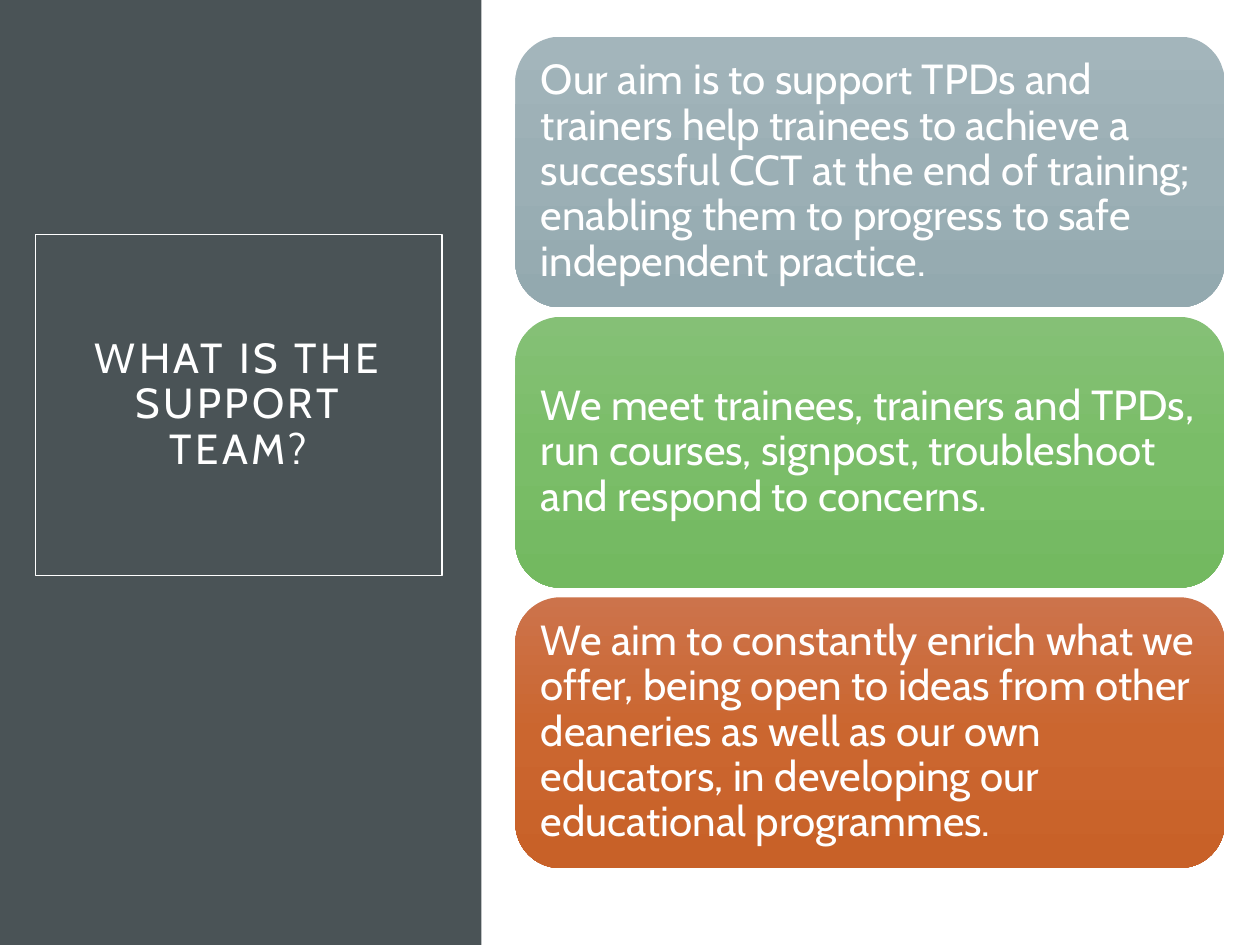
import copy

import pptx
import pptx.dml.color
import pptx.enum.shapes
import pptx.enum.text
import pptx.util
from pptx.util import Inches

SHAPES = pptx.enum.shapes.MSO_SHAPE
ALIGN = pptx.enum.text.PP_ALIGN


def rgb(value):
    return pptx.dml.color.RGBColor.from_string(value)


def write_text(shape, text, inset, align=ALIGN.LEFT, space_after=0, spacing=0):
    """Fill shape with one white paragraph; spacing is between letters, in points."""
    frame = shape.text_frame
    frame.word_wrap = True
    frame.vertical_anchor = pptx.enum.text.MSO_ANCHOR.MIDDLE
    frame.margin_left = frame.margin_right = Inches(inset)
    frame.margin_top = frame.margin_bottom = Inches(inset)
    paragraph = frame.paragraphs[0]
    paragraph.alignment = align
    paragraph.line_spacing = 0.9
    paragraph.space_after = pptx.util.Pt(space_after)
    run = paragraph.add_run()
    run.text = text
    run.font.name = "Cabin"
    run.font.size = pptx.util.Pt(24)
    run.font.color.rgb = rgb("FFFFFF")
    if spacing:
        run.font._element.set("spc", str(spacing * 100))


presentation = pptx.Presentation()
presentation.slide_width = Inches(10)
presentation.slide_height = Inches(7.5)
slide = presentation.slides.add_slide(presentation.slide_layouts[6])

# Title panel
panel = slide.shapes.add_shape(SHAPES.RECTANGLE, 0, 0, Inches(3.82), Inches(7.5))
panel.shadow.inherit = False
panel.fill.solid()
panel.fill.fore_color.rgb = rgb("4A5356")
panel.line.fill.background()

title = slide.shapes.add_shape(
    SHAPES.RECTANGLE, Inches(0.28), Inches(1.86), Inches(3.23), Inches(2.71))
title.shadow.inherit = False
title.fill.background()
title.line.color.rgb = rgb("FFFFFF")
title.line.width = pptx.util.Pt(0.75)
write_text(title, "WHAT IS THE SUPPORT TEAM?", inset=0.2,
           align=ALIGN.CENTER, space_after=6, spacing=2)

# Aims, one gradient card each
aims = [
    ("Our aim is to support TPDs and trainers help trainees to achieve a "
     "successful CCT at the end of training; enabling them to progress to safe "
     "independent practice.", ["A3B5BB", "9BAFB5", "93A9AF"]),
    ("We meet trainees, trainers and TPDs, run courses, signpost, troubleshoot "
     "and respond to concerns.", ["85C076", "7ABD68", "73B960"]),
    ("We aim to constantly enrich what we offer, being open to ideas from other "
     "deaneries as well as our own educators, in developing our educational "
     "programmes.", ["CC734B", "CB662F", "C86128"]),
]
CARD_LEFT, CARD_TOP, CARD_WIDTH, CARD_HEIGHT = 4.09, 0.29, 5.63, 2.15
CARD_PITCH = 2.225
TEXT_INDENT = 0.105  # keeps the text clear of the rounded corners

for row, (aim, shades) in enumerate(aims):
    top = CARD_TOP + row * CARD_PITCH
    card = slide.shapes.add_shape(
        SHAPES.ROUNDED_RECTANGLE, Inches(CARD_LEFT), Inches(top),
        Inches(CARD_WIDTH), Inches(CARD_HEIGHT))
    card.shadow.inherit = False
    card.line.fill.background()
    card.fill.gradient()
    card.fill.gradient_angle = 270
    stop_list = card._element.spPr.find(".//" + pptx.oxml.ns.qn("a:gsLst"))
    stop_list.insert(1, copy.deepcopy(stop_list[0]))
    for stop, position, shade in zip(card.fill.gradient_stops, (0, 0.5, 1), shades):
        stop.position = position
        stop.color.rgb = rgb(shade)

    aim_box = slide.shapes.add_textbox(
        Inches(CARD_LEFT + TEXT_INDENT), Inches(top + TEXT_INDENT),
        Inches(CARD_WIDTH - 2 * TEXT_INDENT), Inches(CARD_HEIGHT - 2 * TEXT_INDENT))
    write_text(aim_box, aim, inset=0.1, space_after=8.4)

presentation.save("out.pptx")
